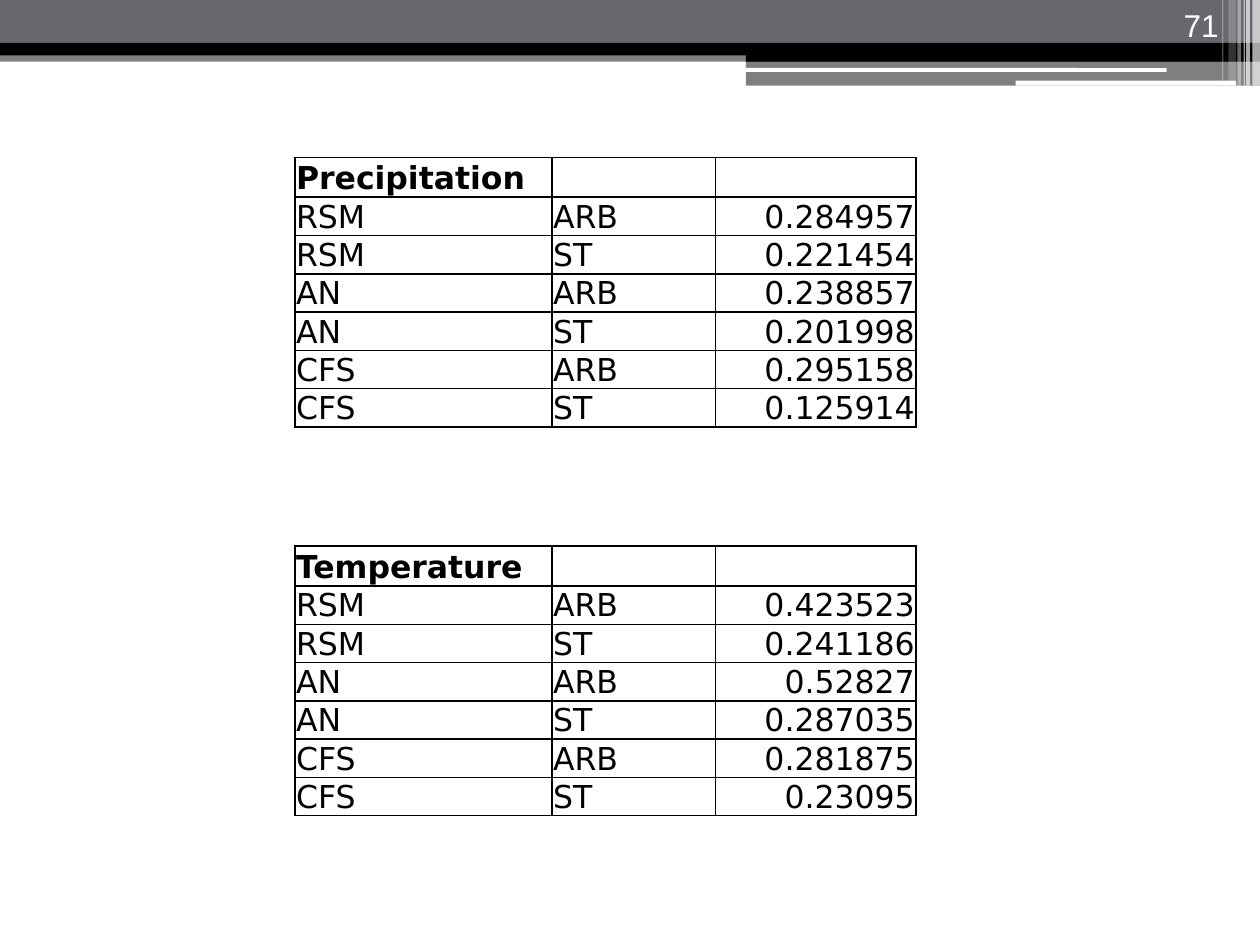
from dataclasses import dataclass

import lxml.etree
import pptx
import pptx.dml.color
import pptx.enum.shapes
import pptx.enum.text
import pptx.oxml.ns
import pptx.util

# The page is a grid of 1000 columns by 750 rows; all lengths count its units.
GRID_COLUMNS, GRID_ROWS = 1000, 750
UNIT = pptx.util.Inches(10) // GRID_COLUMNS

COLORS = {"black": "000000", "white": "FFFFFF", "slate": "69676D"}
SHAPES = pptx.enum.shapes.MSO_SHAPE
ALIGN = pptx.enum.text.PP_ALIGN
BOTTOM = pptx.enum.text.MSO_ANCHOR.BOTTOM


@dataclass
class Band:
    left: float
    top: float
    width: float
    height: float
    color: str
    opacity: int = 100
    rounded: bool = False


HEADER_BANDS = [
    Band(0, 40, 1000, 9, "black", 50),
    Band(0, 0, 1000, 34, "slate"),
    Band(0, 34, 1000, 10, "black"),
    Band(592, 39, 408, 10, "black"),
    Band(592, 48, 408, 20, "black", 50),
    Band(591, 54, 335, 3, "white", rounded=True),
    Band(806, 64, 175, 4, "white", rounded=True),
    Band(994, 0, 6, 68, "white", 65),
    Band(989, 0, 3, 68, "white", 65),
    Band(987, 0, 1, 68, "white", 60),
    Band(982, 0, 3, 68, "white", 40),
    Band(975, 0, 6, 64, "white", 20),
    Band(970, 0, 1, 64, "white", 30),
]


@dataclass
class Section:
    title: str
    values: list[str]


MODELS = ["RSM", "AN", "CFS"]
BASINS = ["ARB", "ST"]
SECTIONS = [
    Section("Precipitation", ["0.284957", "0.221454", "0.238857",
                              "0.201998", "0.295158", "0.125914"]),
    Section("Temperature", ["0.423523", "0.241186", "0.52827",
                            "0.287035", "0.281875", "0.23095"]),
]
GAP_ROWS = 3
TABLE_LEFT, TABLE_TOP = 234, 125
COLUMN_WIDTHS = [204, 130, 159]
ROW_HEIGHT = 30.4


def units(count: float) -> int:
    return round(count * UNIT)


def rgb(name: str) -> pptx.dml.color.RGBColor:
    return pptx.dml.color.RGBColor.from_string(COLORS[name])


def set_all(target, formats: dict) -> None:
    for name, value in formats.items():
        setattr(target, name, value)


def add_element(parent, tag: str, **attributes: str):
    element = lxml.etree.SubElement(parent, pptx.oxml.ns.qn(tag))
    for name, value in attributes.items():
        element.set(name, value)
    return element


def draw_band(page, band: Band) -> None:
    kind = SHAPES.ROUNDED_RECTANGLE if band.rounded else SHAPES.RECTANGLE
    shape = page.shapes.add_shape(
        kind, units(band.left), units(band.top), units(band.width), units(band.height))
    shape.shadow.inherit = False
    shape.line.fill.background()
    shape.fill.solid()
    shape.fill.fore_color.rgb = rgb(band.color)
    if band.opacity < 100:
        color = shape.fill._xPr.find(".//" + pptx.oxml.ns.qn("a:srgbClr"))
        add_element(color, "a:alpha", val=str(band.opacity * 1000))


def write(frame, text: str, font: str, color: str, align, bold: bool = False) -> None:
    para = frame.paragraphs[0]
    para.alignment = align
    span = para.add_run()
    span.text = text
    set_all(span.font, {"name": font, "size": pptx.util.Pt(18), "bold": bold})
    span.font.color.rgb = rgb(color)


def draw_page_number(page, text: str) -> None:
    box = page.shapes.add_textbox(units(894), 0, units(83), units(40))
    set_all(box.text_frame, {"word_wrap": True, "vertical_anchor": BOTTOM})
    write(box.text_frame, text, "Arial", "white", ALIGN.RIGHT)


def set_borders(cell, visible_sides: str) -> None:
    """Line the sides named by the letters L, R, T and B; clear the others."""
    properties = cell._tc.get_or_add_tcPr()
    for position, side in enumerate("LRTB"):
        line = add_element(properties, f"a:ln{side}", w=str(pptx.util.Pt(1)))
        if side in visible_sides:
            add_element(add_element(line, "a:solidFill"), "a:srgbClr", val=COLORS["black"])
        else:
            add_element(line, "a:noFill")
        properties.insert(position, line)


def section_rows(section: Section) -> list[list[str]]:
    labels = [(model, basin) for model in MODELS for basin in BASINS]
    return [[section.title, "", ""]] + [
        [*label, value] for label, value in zip(labels, section.values)]


def draw_table(page) -> None:
    first, second = (section_rows(section) for section in SECTIONS)
    gap = range(len(first), len(first) + GAP_ROWS)
    rows = first + [[""] * len(COLUMN_WIDTHS) for _ in gap] + second
    table = page.shapes.add_table(
        len(rows), len(COLUMN_WIDTHS), units(TABLE_LEFT), units(TABLE_TOP),
        units(sum(COLUMN_WIDTHS)), units(ROW_HEIGHT * len(rows))).table
    set_all(table, {"first_row": False, "horz_banding": False})
    for column, width in zip(table.columns, COLUMN_WIDTHS):
        column.width = units(width)

    titles = {section.title for section in SECTIONS}
    cell_format = {"margin_left": units(1), "margin_right": units(1),
                   "margin_top": units(1), "margin_bottom": 0,
                   "vertical_anchor": BOTTOM}
    for row_index, texts in enumerate(rows):
        table.rows[row_index].height = units(ROW_HEIGHT)
        sides = "LRTB"
        if row_index in gap:
            sides = {gap[0]: "T", gap[-1]: "B"}.get(row_index, "")
        for column_index, text in enumerate(texts):
            cell = table.cell(row_index, column_index)
            set_all(cell, cell_format)
            cell.fill.background()
            set_borders(cell, sides)
            if text:
                align = ALIGN.RIGHT if column_index == 2 else ALIGN.LEFT
                write(cell.text_frame, text, "DejaVu Sans", "black", align, text in titles)


def main() -> None:
    deck = pptx.Presentation()
    set_all(deck, {"slide_width": units(GRID_COLUMNS), "slide_height": units(GRID_ROWS)})
    page = deck.slides.add_slide(deck.slide_layouts[6])
    for band in HEADER_BANDS:
        draw_band(page, band)
    draw_table(page)
    draw_page_number(page, "71")
    deck.save("out.pptx")


if __name__ == "__main__":
    main()
